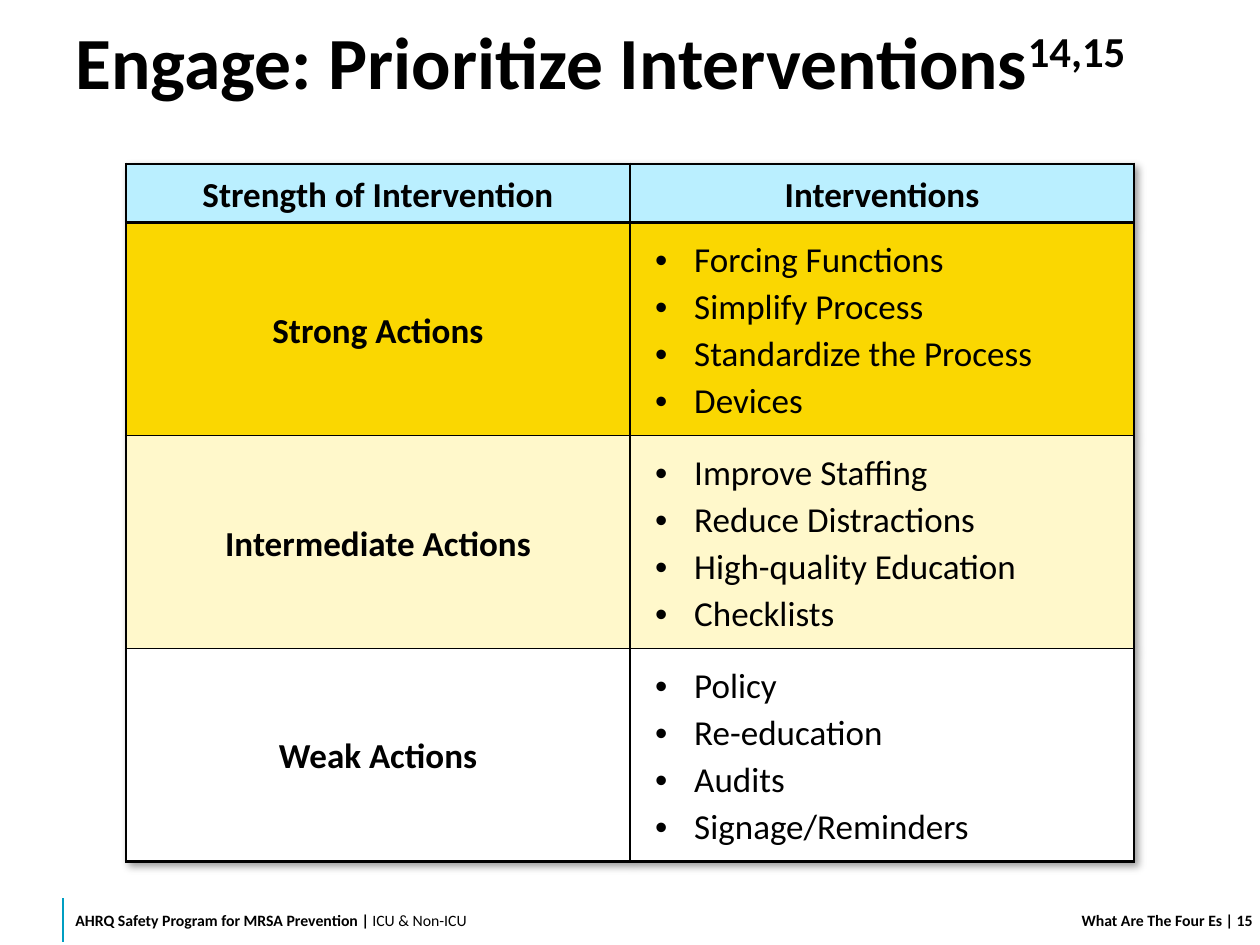
from dataclasses import dataclass

from lxml.etree import SubElement
from pptx import Presentation
from pptx.dml.color import RGBColor
from pptx.enum.shapes import MSO_CONNECTOR
from pptx.enum.text import MSO_ANCHOR, PP_ALIGN
from pptx.oxml import parse_xml
from pptx.oxml.ns import nsdecls, qn
from pptx.util import Inches, Pt


@dataclass(frozen=True)
class Theme:
    font: str = "Calibri"
    text: str = "000000"
    accent: str = "009EC2"
    header: str = "BAEFFF"
    strong: str = "FAD701"
    intermediate: str = "FFF8CB"
    weak: str = "FFFFFF"
    title_size: int = 42
    table_size: int = 20
    footer_size: int = 9
    thick: float = 1.5
    thin: float = 1


THEME = Theme()
HEADERS = ("Strength of Intervention", "Interventions")
ACTIONS = (
    ("Strong Actions", THEME.strong,
     ("Forcing Functions", "Simplify Process", "Standardize the Process", "Devices")),
    ("Intermediate Actions", THEME.intermediate,
     ("Improve Staffing", "Reduce Distractions", "High-quality Education", "Checklists")),
    ("Weak Actions", THEME.weak,
     ("Policy", "Re-education", "Audits", "Signage/Reminders")),
)


def add_run(p, text, size, bold=True):
    r = p.add_run()
    r.text = text
    r.font.name = THEME.font
    r.font.size = Pt(size)
    r.font.bold = bold
    r.font.color.rgb = RGBColor.from_string(THEME.text)
    return r


def set_margins(item, left, top, right, bottom):
    item.margin_left, item.margin_top = Inches(left), Inches(top)
    item.margin_right, item.margin_bottom = Inches(right), Inches(bottom)


def add_text(slide, box, margins, align=PP_ALIGN.LEFT):
    tf = slide.shapes.add_textbox(*map(Inches, box)).text_frame
    tf.word_wrap = True
    tf.vertical_anchor = MSO_ANCHOR.MIDDLE
    set_margins(tf, *margins)
    p = tf.paragraphs[0]
    p.alignment = align
    return p


def add_title(slide, box):
    p = add_text(slide, box, (0.1, 0.1, 0.1, 0.05))
    p.line_spacing = 0.9
    add_run(p, "Engage: Prioritize Interventions", THEME.title_size)
    r = add_run(p, "14,15", THEME.title_size)
    r.font._element.set("baseline", "30000")


def add_bullet(p):
    pPr = p._p.get_or_add_pPr()
    pPr.set("marL", str(Inches(0.31)))
    pPr.set("indent", str(Inches(-0.31)))
    SubElement(pPr, qn("a:buFont"), typeface="Arial")
    SubElement(pPr, qn("a:buChar"), char="•")


def style_cell(cell, color, top, bottom):
    cell.vertical_anchor = MSO_ANCHOR.MIDDLE
    set_margins(cell, 0.2, 0.05, 0.2, 0.05)
    tcPr = cell._tc.get_or_add_tcPr()
    widths = {"L": THEME.thick, "R": THEME.thick, "T": top, "B": bottom}
    for side, width in widths.items():
        ln = SubElement(tcPr, qn(f"a:ln{side}"), w=str(Pt(width)))
        SubElement(SubElement(ln, qn("a:solidFill")), qn("a:srgbClr"), val=THEME.text)
    cell.fill.solid()
    cell.fill.fore_color.rgb = RGBColor.from_string(color)


def fill_cell(cell, lines, bulleted=False):
    tf = cell.text_frame
    for i, line in enumerate(lines):
        p = tf.add_paragraph() if i else tf.paragraphs[0]
        if bulleted:
            add_bullet(p)
        else:
            p.alignment = PP_ALIGN.CENTER
        p.line_spacing = 1.1
        add_run(p, line, THEME.table_size, bold=not bulleted)


def add_table_shadow(table):
    table._tbl.tblPr.insert(0, parse_xml(
        f'<a:effectLst {nsdecls("a")}>'
        '<a:outerShdw blurRad="50800" dist="38100" dir="2700000" algn="tl" rotWithShape="0">'
        '<a:prstClr val="black"><a:alpha val="40000"/></a:prstClr>'
        '</a:outerShdw></a:effectLst>'))


def add_actions_table(slide, box):
    left, top, width, height = map(Inches, box)
    last = len(ACTIONS)
    table = slide.shapes.add_table(last + 1, 2, left, top, width, height).table
    add_table_shadow(table)
    header_height = Inches(0.44)
    table.rows[0].height = header_height
    for col, text in enumerate(HEADERS):
        cell = table.cell(0, col)
        style_cell(cell, THEME.header, THEME.thick, THEME.thick)
        fill_cell(cell, [text])
    for row, (name, color, items) in enumerate(ACTIONS, 1):
        table.rows[row].height = (height - header_height) // last
        upper = THEME.thick if row == 1 else THEME.thin
        lower = THEME.thick if row == last else THEME.thin
        for col in range(2):
            style_cell(table.cell(row, col), color, upper, lower)
        fill_cell(table.cell(row, 0), [name])
        fill_cell(table.cell(row, 1), items, bulleted=True)


def add_footer(slide, box):
    left, top, width, height = box
    size = THEME.footer_size
    p = add_text(slide, (left, top, 4.1, height), (0.1, 0, 0.1, 0))
    add_run(p, "AHRQ Safety Program for MRSA Prevention | ", size)
    add_run(p, "ICU & Non-ICU", size, bold=False)

    x = Inches(left)
    rule = slide.shapes.add_connector(
        MSO_CONNECTOR.STRAIGHT, x, Inches(top + 0.03), x, Inches(top + 0.38))
    rule.line.color.rgb = RGBColor.from_string(THEME.accent)
    rule.line.width = Pt(1)
    SubElement(rule._element.spPr, qn("a:effectLst"))

    number_width = 0.3
    number_left = left + width - number_width
    p = add_text(slide, (number_left - 2.6, top, 2.6, height),
                 (0.1, 0.05, 0, 0.05), PP_ALIGN.RIGHT)
    add_run(p, "What Are The Four Es", size)
    p = add_text(slide, (number_left, top, number_width, height), (0, 0.05, 0, 0.05))
    add_run(p, " | 15", size)


def main():
    prs = Presentation()
    prs.slide_width, prs.slide_height = Inches(10), Inches(7.5)
    slide = prs.slides.add_slide(prs.slide_layouts[6])
    add_title(slide, (0.5, 0, 9, 1))
    add_actions_table(slide, (1, 1.3, 8, 5.51))
    add_footer(slide, (0.5, 7.1, 9.5, 0.4))
    prs.save("out.pptx")


if __name__ == "__main__":
    main()
